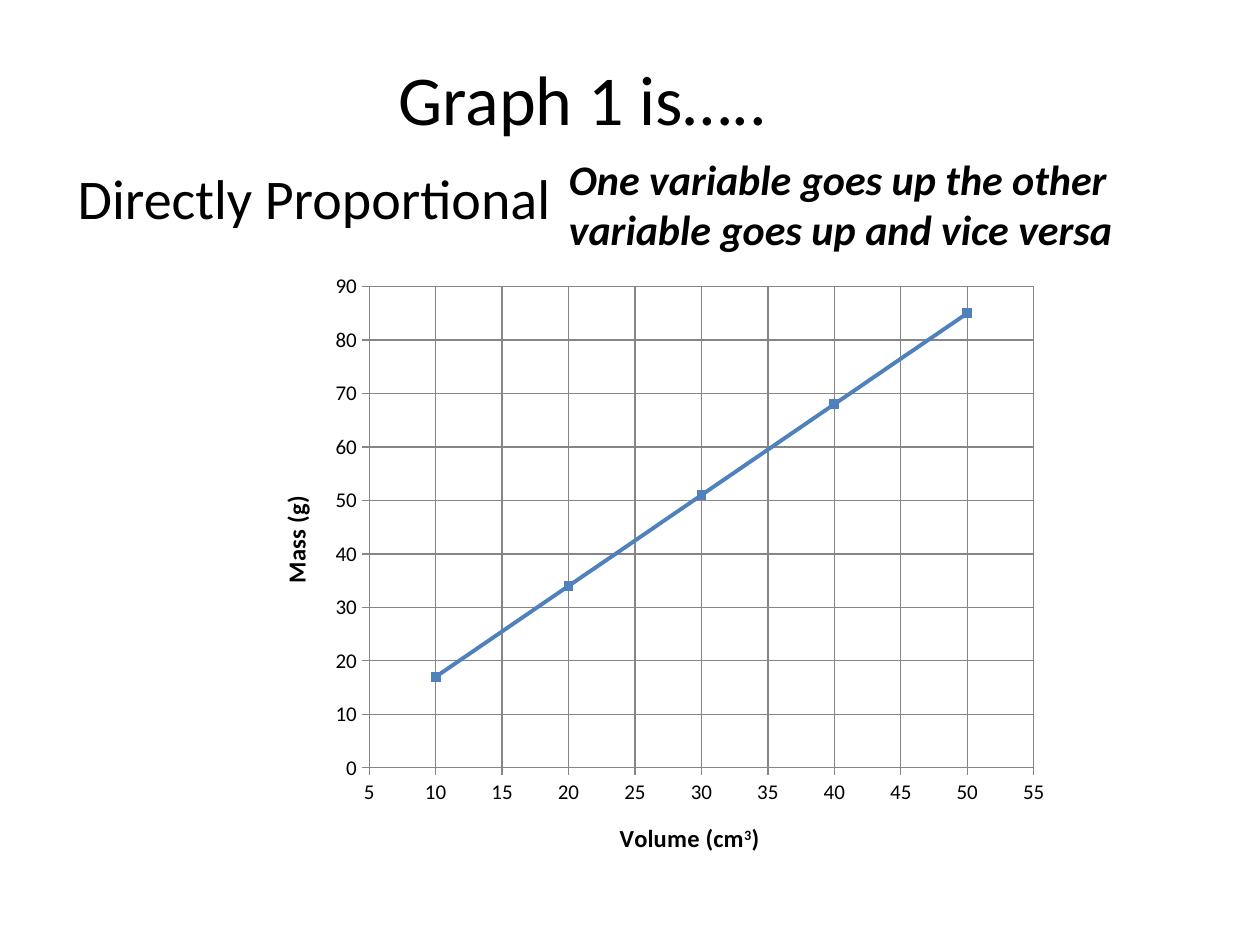
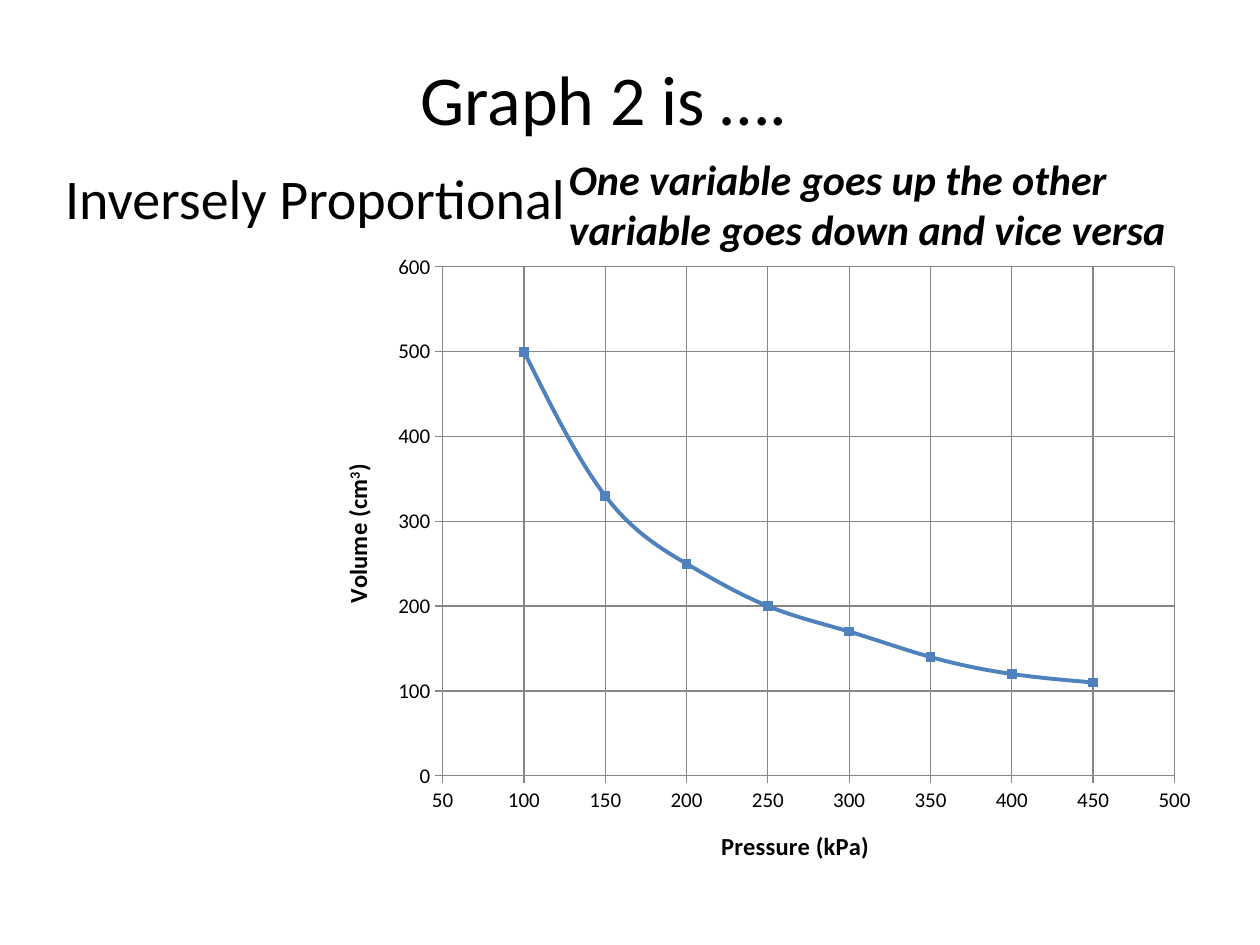
from dataclasses import dataclass

from lxml import etree
from pptx import Presentation
from pptx.chart.data import XyChartData
from pptx.dml.color import RGBColor
from pptx.enum.chart import XL_CHART_TYPE, XL_MARKER_STYLE, XL_TICK_MARK
from pptx.enum.text import MSO_ANCHOR, MSO_AUTO_SIZE, PP_ALIGN
from pptx.oxml.ns import qn
from pptx.util import Inches, Pt

SMOOTH_SCATTER = XL_CHART_TYPE.XY_SCATTER_SMOOTH
SQUARE = XL_MARKER_STYLE.SQUARE
TICK_OUTSIDE = XL_TICK_MARK.OUTSIDE
MIDDLE, TOP = MSO_ANCHOR.MIDDLE, MSO_ANCHOR.TOP
NO_AUTOFIT, GROW = MSO_AUTO_SIZE.NONE, MSO_AUTO_SIZE.SHAPE_TO_FIT_TEXT
LEFT, CENTER = PP_ALIGN.LEFT, PP_ALIGN.CENTER

BLACK = RGBColor(0x00, 0x00, 0x00)
GRID_GRAY = RGBColor(0x86, 0x86, 0x86)
CURVE_BLUE = RGBColor(0x4F, 0x81, 0xBD)
FONT = "Calibri"

SLIDE_WIDTH, SLIDE_HEIGHT = Inches(10), Inches(7.5)
COLUMNS, ROWS = 120, 90
HANGING = 0.38
ACROSS_TITLE_PERCENT = (45, 89.6)


@dataclass
class Axis:
    title: str
    low: int
    high: int
    step: int
    title_percent: tuple
    superscript: str = ""
    closing: str = ""


@dataclass
class Graph:
    title: str
    title_columns: int
    relation: str
    relation_shift: float
    relation_rows: int
    rule: str
    area: tuple
    plot_percent: tuple
    across: Axis
    upward: Axis
    points: tuple


GRAPHS = (
    Graph(
        "Graph 1 is…..", 99, "Directly Proportional", 0.1, 12,
        "One variable goes up the other variable goes up and vice versa",
        (24, 25, 77, 59), (14.5, 3.9, 82.2, 77.7),
        Axis("Volume (cm", 5, 55, 5, ACROSS_TITLE_PERCENT, "3", ")"),
        Axis("Mass (g)", 0, 90, 10, (2.8, 37)),
        ((10, 17), (20, 34), (30, 51), (40, 68), (50, 85)),
    ),
    Graph(
        "Graph 2 is ….", 103, "Inversely Proportional", 0, 11,
        "One variable goes up the other variable goes down and vice versa",
        (30, 23, 85, 62), (14.3, 3.9, 82, 78.2),
        Axis("Pressure (kPa)", 50, 500, 50, ACROSS_TITLE_PERCENT),
        Axis("Volume (cm", 0, 600, 100, (2.5, 33.6), "3", ")"),
        ((100, 500), (150, 330), (200, 250), (250, 200),
         (300, 170), (350, 140), (400, 120), (450, 110)),
    ),
)


def grid_box(column, row, columns, rows):
    return (
        round(SLIDE_WIDTH * column / COLUMNS),
        round(SLIDE_HEIGHT * row / ROWS),
        round(SLIDE_WIDTH * columns / COLUMNS),
        round(SLIDE_HEIGHT * rows / ROWS),
    )


def move(box, *cells):
    box.left, box.top, box.width, box.height = grid_box(*cells)


def style(font, size, bold=False, italic=False):
    font.name = FONT
    font.size = Pt(size)
    font.bold = bold
    font.italic = italic
    font.color.rgb = BLACK


def write(box, text, size, align=LEFT, anchor=TOP, fit=NO_AUTOFIT, **emphasis):
    frame = box.text_frame
    frame.text = text
    frame.word_wrap = True
    frame.auto_size = fit
    frame.vertical_anchor = anchor
    para = frame.paragraphs[0]
    para.alignment = align
    style(para.runs[0].font, size, **emphasis)
    return para


def add_title(page, text, columns):
    box = page.shapes.title
    move(box, 6, 3.6, columns, 11.4)
    write(box, text, 40, CENTER, MIDDLE)


def add_relation(page, text, shift, rows):
    box = page.placeholders[1]
    move(box, 5, 15, 108, rows)
    para = write(box, text, 32)
    settings = para._p.get_or_add_pPr()
    settings.set("marL", str(Inches(HANGING)))
    settings.set("indent", str(Inches(shift - HANGING)))
    etree.SubElement(settings, qn("a:buNone"))


def add_rule(page, text):
    box = page.shapes.add_textbox(*grid_box(53, 14, 63, 11))
    write(box, text, 24, fit=GROW, bold=True, italic=True)


def set_layout(parent, position, percents, inner=False):
    for old in parent.findall(qn("c:layout")):
        parent.remove(old)
    layout = etree.Element(qn("c:layout"))
    parent.insert(position, layout)
    manual = etree.SubElement(layout, qn("c:manualLayout"))
    entries = [("layoutTarget", "inner")] if inner else []
    entries += [("xMode", "edge"), ("yMode", "edge")]
    entries += [(name, percent / 100) for name, percent in zip("xywh", percents)]
    for name, value in entries:
        etree.SubElement(manual, qn("c:" + name)).set("val", str(value))


def format_axis(axis, plan):
    axis.minimum_scale = plan.low
    axis.maximum_scale = plan.high
    axis.major_unit = plan.step
    axis.major_tick_mark = TICK_OUTSIDE
    axis.has_major_gridlines = True
    for line in (axis.major_gridlines.format.line, axis.format.line):
        line.color.rgb = GRID_GRAY
        line.width = Pt(0.75)
    style(axis.tick_labels.font, 12)
    axis.tick_labels.number_format = "General"
    axis.tick_labels.number_format_is_linked = False
    axis_title = axis.axis_title
    para = axis_title.text_frame.paragraphs[0]
    for text in filter(None, (plan.title, plan.superscript, plan.closing)):
        span = para.add_run()
        span.text = text
        style(span.font, 14, bold=True)
        if text == plan.superscript:
            span._r.get_or_add_rPr().set("baseline", "30000")
    set_layout(axis_title._element, 1, plan.title_percent)


def smooth_curve(series):
    element = series._element
    smooth = element.find(qn("c:smooth"))
    if smooth is None:
        smooth = etree.SubElement(element, qn("c:smooth"))
    smooth.set("val", "1")


def add_graph(page, graph):
    data = XyChartData()
    series_data = data.add_series("Series 1")
    for x, y in graph.points:
        series_data.add_data_point(x, y)
    chart = page.shapes.add_chart(
        SMOOTH_SCATTER, *grid_box(*graph.area), data
    ).chart
    chart.has_legend = False
    chart.has_title = False
    style(chart.font, 10)
    plot = chart.plots[0]
    plot.vary_by_categories = False
    series = plot.series[0]
    smooth_curve(series)
    series.format.line.color.rgb = CURVE_BLUE
    series.format.line.width = Pt(2.25)
    series.marker.style = SQUARE
    series.marker.size = 5
    fill = series.marker.format.fill
    fill.solid()
    fill.fore_color.rgb = CURVE_BLUE
    series.marker.format.line.color.rgb = CURVE_BLUE
    format_axis(chart.category_axis, graph.across)
    format_axis(chart.value_axis, graph.upward)
    plot_area = chart._chartSpace.find(".//" + qn("c:plotArea"))
    set_layout(plot_area, 0, graph.plot_percent, inner=True)


def add_page(deck, graph):
    page = deck.slides.add_slide(deck.slide_layouts[1])
    add_title(page, graph.title, graph.title_columns)
    add_relation(page, graph.relation, graph.relation_shift, graph.relation_rows)
    add_graph(page, graph)
    add_rule(page, graph.rule)


def main():
    deck = Presentation()
    deck.slide_width, deck.slide_height = SLIDE_WIDTH, SLIDE_HEIGHT
    for graph in GRAPHS:
        add_page(deck, graph)
    deck.save("out.pptx")


if __name__ == "__main__":
    main()
